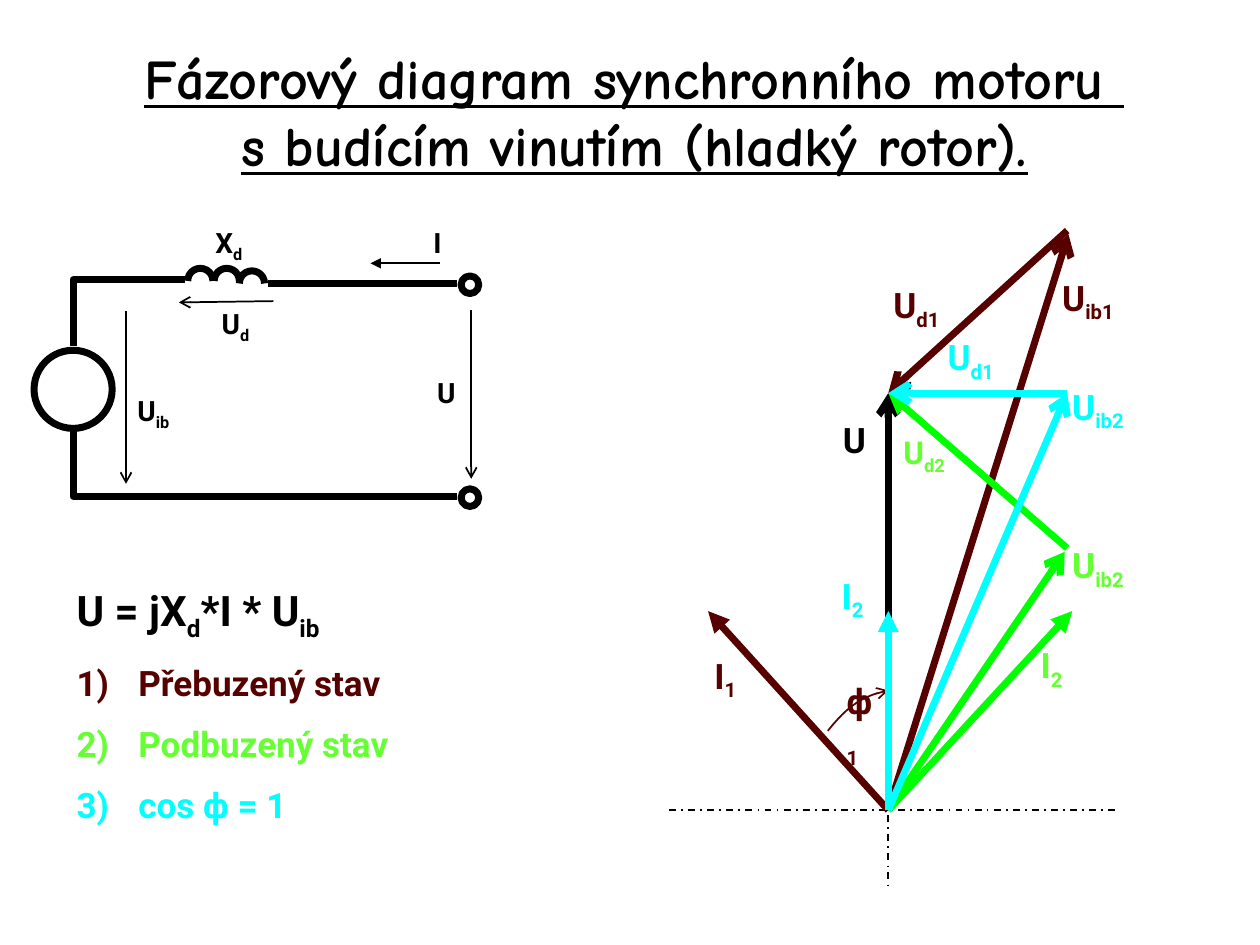
from lxml import etree
from pptx import Presentation
from pptx.dml.color import RGBColor
from pptx.enum.dml import MSO_LINE_DASH_STYLE as Dash
from pptx.enum.shapes import MSO_CONNECTOR as Connector, MSO_SHAPE as Shape
from pptx.enum.text import MSO_ANCHOR as Anchor, PP_ALIGN as Align
from pptx.oxml.ns import qn
from pptx.util import Inches, Pt

CELL = Inches(0.1)  # the slide is a grid of 100 columns by 75 rows
BLACK, BROWN, GREEN, LIME, CYAN = "000000", "560000", "00FF00", "66FF33", "00FFFF"

presentation = Presentation()
presentation.slide_width, presentation.slide_height = 100 * CELL, 75 * CELL
slide = presentation.slides.add_slide(presentation.slide_layouts[6])
shapes = slide.shapes


def style_line(shape, color, width, arrow=None, dash=None):
    """Set the outline of a shape or connector and remove its shadow."""
    shape.line.color.rgb = RGBColor.from_string(color)
    shape.line.width = Pt(width)
    if dash:
        shape.line.dash_style = dash
    if arrow:
        etree.SubElement(shape.line._get_or_add_ln(), qn("a:tailEnd"), type=arrow)
    properties = shape._element.spPr
    if properties.find(qn("a:effectLst")) is None:
        etree.SubElement(properties, qn("a:effectLst"))


def add_runs(paragraph, text, size, color, font="Roboto"):
    """Add bold runs; every second part between underscores is a subscript."""
    for index, part in enumerate(text.split("_")):
        run = paragraph.add_run()
        run.text = part
        run.font.name, run.font.size, run.font.bold = font, Pt(size), True
        run.font.color.rgb = RGBColor.from_string(color)
        if index % 2:
            run.font._element.set("baseline", "-25000")


# Title
title = shapes.add_textbox(2.7 * CELL, 2.1 * CELL, 95.3 * CELL, 13.4 * CELL).text_frame
title.word_wrap = True
title.vertical_anchor = Anchor.MIDDLE
paragraph = title.paragraphs[0]
paragraph.alignment = Align.CENTER
for index, text in enumerate(["Fázorový diagram synchronního motoru ", "s budícím vinutím (hladký rotor)."]):
    if index:
        paragraph.add_line_break()
    add_runs(paragraph, text, 32, BLACK, "Comic Neue")
for run in paragraph.runs:
    run.font.underline = True

# Equation and list of operating states
states = shapes.add_textbox(5.1 * CELL, 45.9 * CELL, 32.3 * CELL, 20 * CELL).text_frame
states.word_wrap = True
for index, (text, size, color) in enumerate([
    ("U = jX_d_*I * U_ib", 24, BLACK),
    ("1) \tPřebuzený stav", 20, BROWN),
    ("2)\tPodbuzený stav", 20, LIME),
    ("3)\tcos ϕ = 1", 20, CYAN),
]):
    paragraph = states.add_paragraph() if index else states.paragraphs[0]
    indent = int(4.9 * CELL)
    paragraph._p.get_or_add_pPr().set("marL", str(indent))
    paragraph._p.get_or_add_pPr().set("indent", str(-indent))
    paragraph.space_before = Pt(11 if index else 0)
    add_runs(paragraph, text, size, color)

# Circuit: generator and two terminals
for left, top, diameter in [(2.7, 27.8, 6.2), (36.6, 38.8, 1.4), (36.6, 21.9, 1.4)]:
    circle = shapes.add_shape(Shape.OVAL, left * CELL, top * CELL, diameter * CELL, diameter * CELL)
    circle.shadow.inherit = False
    circle.fill.background()
    style_line(circle, BLACK, 4)

# Circuit: coil of three half circles
for left, top in [(14.9, 21.3), (17, 21.3), (19, 21.5)]:
    turn = shapes.add_shape(Shape.ARC, left * CELL, top * CELL, 2 * CELL, 2 * CELL)
    turn.adjustments[0], turn.adjustments[1] = 108, 0  # from 180 to 0 degrees
    turn.shadow.inherit = False
    turn.fill.background()
    style_line(turn, BLACK, 4)

# Circuit: wires, the bent ones running across and then to the generator
for kind, x1, y1, x2, y2 in [
    (Connector.ELBOW, 14.7, 22.2, 5.8, 27.5),
    (Connector.ELBOW, 36.3, 39.4, 5.8, 34.2),
    (Connector.STRAIGHT, 21.3, 22.5, 36.3, 22.5),
]:
    wire = shapes.add_connector(kind, x1 * CELL, y1 * CELL, x2 * CELL, y2 * CELL)
    if kind == Connector.ELBOW:
        wire._element.spPr.find(qn("a:prstGeom")).set("prst", "bentConnector2")
    style_line(wire, BLACK, 4)

# Angle between current and voltage, a sampled cubic curve
curve = [(65.7, 58), (67.3, 56), (68.5, 55.2), (70.5, 54.8)]
points = []
for step in range(13):
    t = step / 12
    weights = [(1 - t) ** 3, 3 * t * (1 - t) ** 2, 3 * t ** 2 * (1 - t), t ** 3]
    points.append(tuple(sum(w * point[axis] for w, point in zip(weights, curve)) * CELL for axis in (0, 1)))
builder = shapes.build_freeform(int(points[0][0]), int(points[0][1]))
builder.add_line_segments(points[1:], close=False)
angle = builder.convert_to_shape()
angle.shadow.inherit = False
angle.fill.background()
style_line(angle, BROWN, 1, "arrow")

# Axes, circuit arrows and phasors
origin, tip = (70.5, 64.3), (70.5, 31.2)
for start, end, color, width, arrow, dash in [
    ((70.5, 35.9), (70.5, 70.6), BLACK, 1, None, Dash.DASH_DOT),
    ((53.1, 64.3), (88.6, 64.3), BLACK, 1, None, Dash.DASH_DOT),
    ((10, 24.7), (10, 38.4), BLACK, 1, "arrow", None),
    ((37.4, 24.6), (37.4, 38), BLACK, 1, "arrow", None),
    ((21.7, 23.9), (14.2, 24), BLACK, 1, "arrow", None),
    ((34.9, 20.9), (29.4, 20.9), BLACK, 1, "triangle", None),
    (origin, tip, BLACK, 4, "arrow", None),
    (origin, (56.2, 48.5), BROWN, 4, "triangle", None),
    ((84.7, 18.3), tip, BROWN, 4, "arrow", None),
    (origin, (84.8, 18.6), BROWN, 4, "arrow", None),
    (origin, (85.1, 48.5), GREEN, 4, "triangle", None),
    ((84.7, 43.5), tip, GREEN, 4, "triangle", None),
    (origin, (84.5, 43.8), GREEN, 4, "arrow", None),
    (origin, (70.5, 48.5), CYAN, 4, "triangle", None),
    ((84.7, 31.2), tip, CYAN, 4, "arrow", None),
    (origin, (84.7, 31.2), CYAN, 4, "arrow", None),
]:
    line = shapes.add_connector(Connector.STRAIGHT, *(value * CELL for value in start + end))
    style_line(line, color, width, arrow, dash)

# Labels of the circuit and of the phasors
for text, left, top, width, height, size, color in [
    ("U_ib", 10.5, 30.8, 3.9, 3.5, 16, BLACK),
    ("U_d", 17.2, 23.9, 3.4, 3.5, 16, BLACK),
    ("U", 34.3, 29.4, 2.5, 3.5, 16, BLACK),
    ("X_d", 16.7, 17.5, 3.3, 3.5, 16, BLACK),
    ("I", 34, 17.5, 1.9, 3.5, 16, BLACK),
    ("U", 66.5, 32.8, 2.8, 4.1, 20, BLACK),
    ("I_1", 56.3, 51.7, 3.3, 4.2, 20, BROWN),
    ("U_ib1", 83.9, 21.7, 5.8, 4.2, 20, BROWN),
    ("U_d1", 70.5, 22.3, 5.2, 4.2, 20, BROWN),
    ("ϕ_1", 66.8, 55.4, 3.7, 4.2, 20, BROWN),
    ("I_2", 82.2, 50.9, 3.3, 4.1, 20, LIME),
    ("U_ib2", 84.7, 43, 5.7, 4.1, 20, LIME),
    ("U_d2", 71.3, 34.2, 4.7, 3.8, 18, LIME),
    ("U_ib2", 84.7, 30.4, 5.7, 4.1, 20, CYAN),
    ("I_2", 66.4, 45.4, 3.3, 4.1, 20, CYAN),
    ("U_d1", 74.8, 26.5, 5.1, 4.1, 20, CYAN),
]:
    label = shapes.add_textbox(left * CELL, top * CELL, width * CELL, height * CELL).text_frame
    label.margin_left = label.margin_right = label.margin_top = label.margin_bottom = Inches(0.04)
    label.word_wrap = "_" in text and size > 16
    label.vertical_anchor = Anchor.MIDDLE if size > 16 else Anchor.TOP
    add_runs(label.paragraphs[0], text, size, color)

presentation.save("out.pptx")
